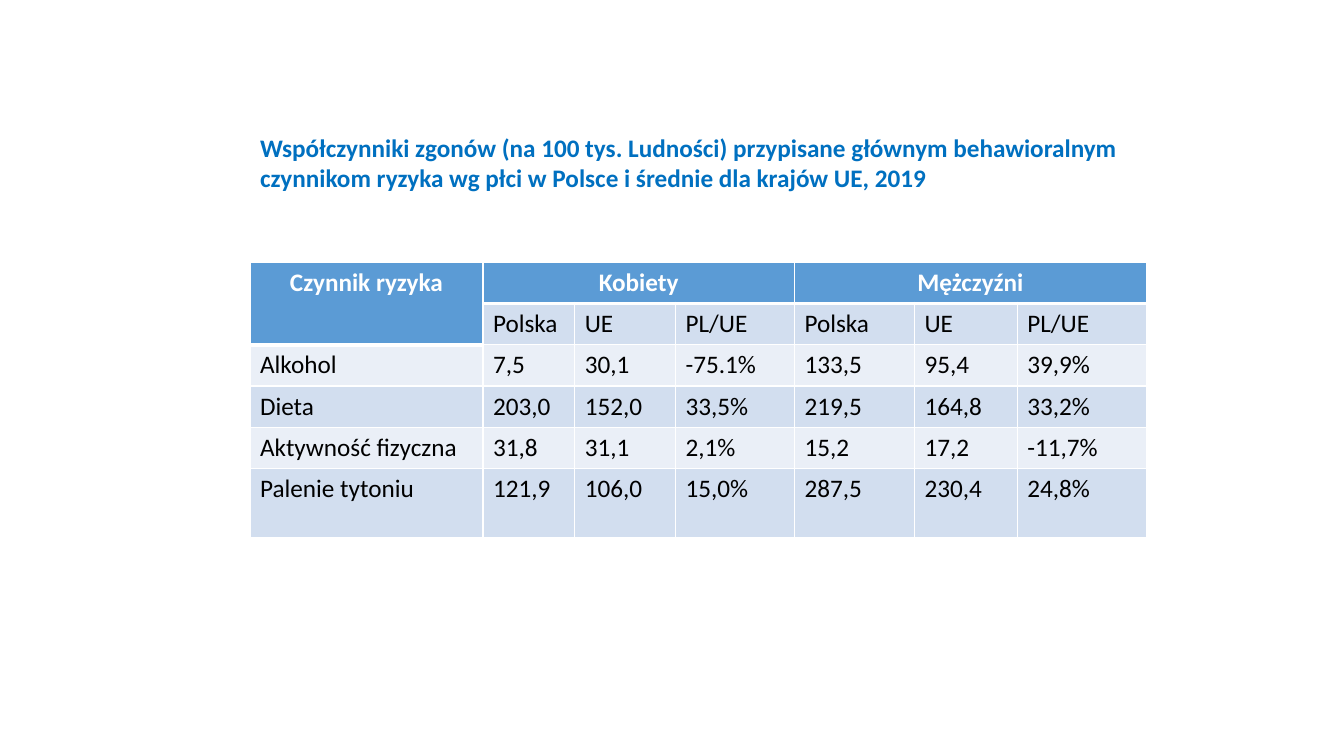
import pptx
import pptx.dml.color
import pptx.enum.text
import pptx.oxml
import pptx.oxml.ns
import pptx.util

Inches = pptx.util.Inches
RGBColor = pptx.dml.color.RGBColor
ALIGN = pptx.enum.text.PP_ALIGN

TITLE = RGBColor(0x00, 0x70, 0xC0)
HEAD = RGBColor(0x5B, 0x9B, 0xD5)
DARK = RGBColor(0xD2, 0xDE, 0xEF)
LIGHT = RGBColor(0xEA, 0xEF, 0xF7)
WHITE = RGBColor(0xFF, 0xFF, 0xFF)
BLACK = RGBColor(0x00, 0x00, 0x00)

LEFT, WIDTH = Inches(2.48), Inches(8.89)
COLS = [2.31, 0.91, 1, 1.18, 1.19, 1.02, 1.28]
ROWS = [0.41] * 5 + [0.68]
DATA = [
    ["Czynnik ryzyka", "Kobiety", "", "", "Mężczyźni", "", ""],
    ["", "Polska", "UE", "PL/UE", "Polska", "UE", "PL/UE"],
    ["Alkohol", "7,5", "30,1", "-75.1%", "133,5", "95,4", "39,9%"],
    ["Dieta", "203,0", "152,0", "33,5%", "219,5", "164,8", "33,2%"],
    ["Aktywność fizyczna", "31,8", "31,1", "2,1%", "15,2", "17,2", "-11,7%"],
    ["Palenie tytoniu", "121,9", "106,0", "15,0%", "287,5", "230,4", "24,8%"],
]


def write(frame, text, color=BLACK, bold=False, align=ALIGN.LEFT):
    para = frame.paragraphs[0]
    para.alignment = align
    run = para.add_run()
    run.text = text
    run.font.name = "Calibri"
    run.font.size = pptx.util.Pt(18)
    run.font.bold = bold
    run.font.color.rgb = color


def edge(cell, side, width):
    """Draw one white cell border; side is L, R, T or B, width is in points."""
    cell._tc.get_or_add_tcPr().append(pptx.oxml.parse_xml(
        f'<a:ln{side} {pptx.oxml.ns.nsdecls("a")} w="{pptx.util.Pt(width)}">'
        f'<a:solidFill><a:srgbClr val="{WHITE}"/></a:solidFill></a:ln{side}>'))


deck = pptx.Presentation()
deck.slide_width, deck.slide_height = Inches(13.33), Inches(7.5)
slide = deck.slides.add_slide(deck.slide_layouts[5])

title = slide.shapes.title
title.left, title.top = LEFT, Inches(1.26)
title.width, title.height = WIDTH, Inches(0.71)
frame = title.text_frame
frame.word_wrap = True
frame.auto_size = pptx.enum.text.MSO_AUTO_SIZE.SHAPE_TO_FIT_TEXT
frame.vertical_anchor = pptx.enum.text.MSO_ANCHOR.TOP
write(frame, "Współczynniki zgonów (na 100 tys. Ludności) przypisane głównym "
      "behawioralnym czynnikom ryzyka wg płci w Polsce i średnie dla krajów "
      "UE, 2019", color=TITLE, bold=True)

table = slide.shapes.add_table(len(ROWS), len(COLS), LEFT, Inches(2.6),
                               WIDTH, Inches(sum(ROWS))).table
for col, width in zip(table.columns, COLS):
    col.width = Inches(width)
for row, height in zip(table.rows, ROWS):
    row.height = Inches(height)

for r, line in enumerate(DATA):
    for c, text in enumerate(line):
        cell = table.cell(r, c)
        head = r == 0 or (r == 1 and c == 0)
        under = (r == 1 and c > 0) or (r == 2 and c == 0)
        for side, width in (("L", 1), ("R", 1), ("T", 3 if under else 1),
                            ("B", 3 if head else 1)):
            edge(cell, side, width)
        cell.fill.solid()
        cell.fill.fore_color.rgb = HEAD if head else DARK if r % 2 else LIGHT
        if text:
            write(cell.text_frame, text, color=WHITE if head else BLACK,
                  bold=head, align=ALIGN.CENTER if head else ALIGN.LEFT)

table.cell(0, 0).merge(table.cell(1, 0))
for c in (1, 4):
    table.cell(0, c).merge(table.cell(0, c + 2))

deck.save("out.pptx")
